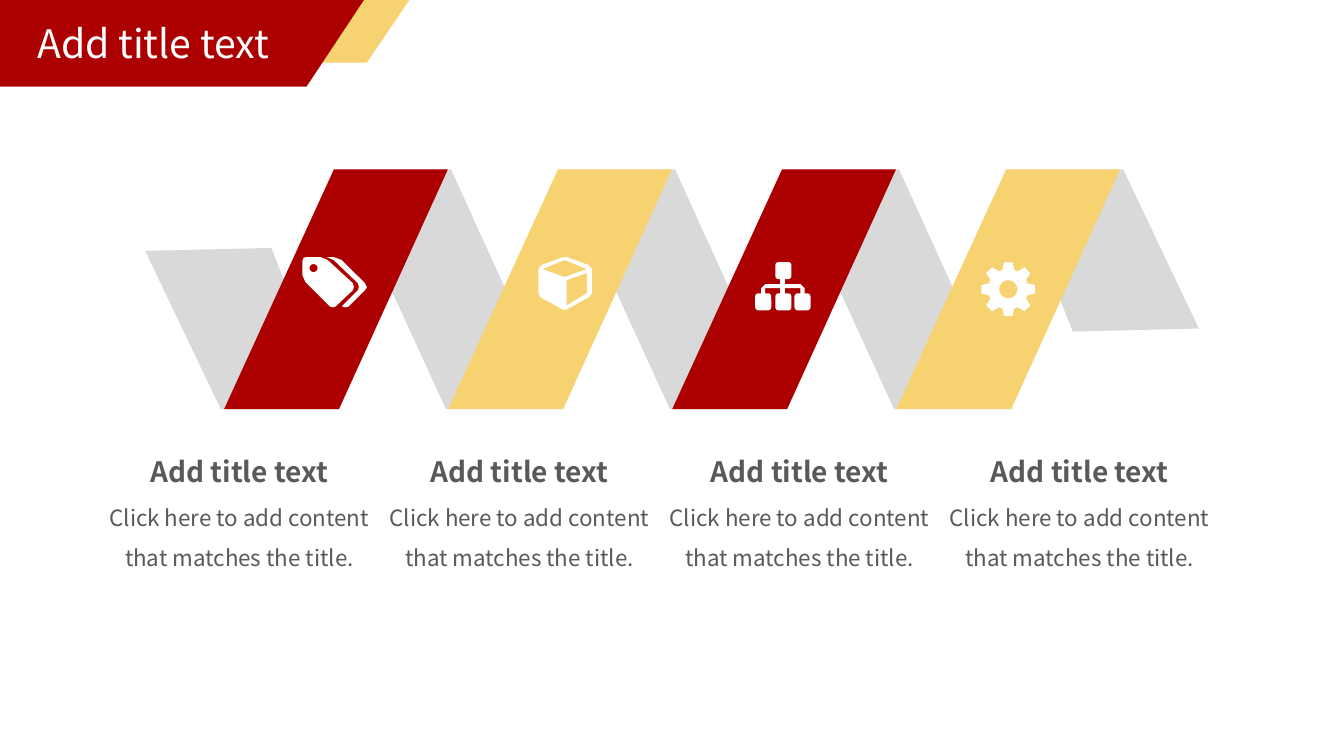
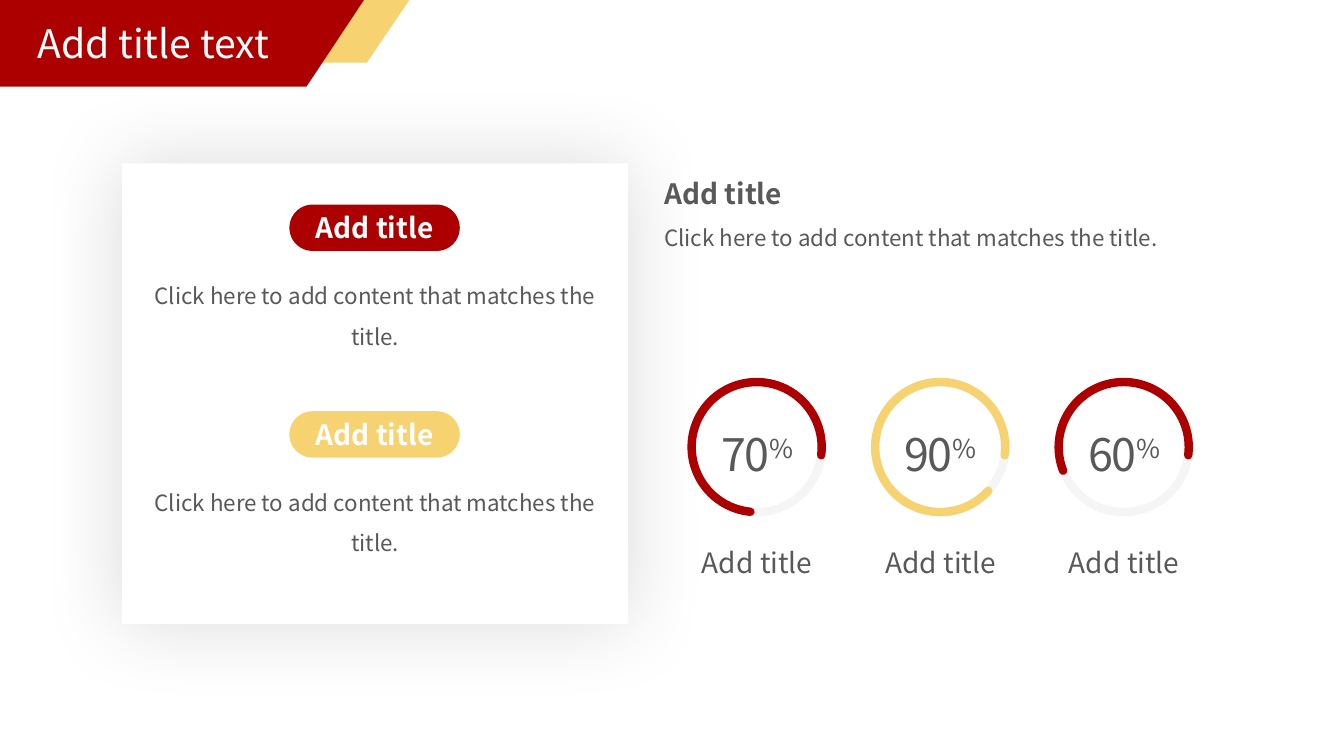
import math
import lxml.etree
import pptx
import pptx.dml.color
import pptx.enum.shapes
import pptx.enum.text
import pptx.oxml.ns
import pptx.util

Inches = pptx.util.Inches
Shapes = pptx.enum.shapes.MSO_SHAPE
Align = pptx.enum.text.PP_ALIGN
Anchor = pptx.enum.text.MSO_ANCHOR

FONT = "Noto Sans CJK SC"
RED, YELLOW, WHITE = "AC0000", "F6D271", "FFFFFF"
INK, FOLD, TRACK = "595959", "D9D9D9", "A6A6A6"

TITLE = "Add title text"
HEADING = "Add title"
CONTENT = "Click here to add content that matches the title."
BANDS = [
    (YELLOW, [(0.83, 0), (4.06, 0), (3.64, 0.62), (0.83, 0.62)]),
    (RED, [(0, 0), (3.61, 0), (3.04, 0.86), (0, 0.86)]),
]
COLUMNS = [(TITLE, CONTENT, colour) for colour in (RED, YELLOW, RED, YELLOW)]
CARD_ITEMS = [(HEADING, CONTENT, RED, 2.03), (HEADING, CONTENT, YELLOW, 4.08)]
RINGS = [("70", HEADING, RED, 57.31), ("90", HEADING, YELLOW, 25.39), ("60", HEADING, RED, 95.2)]

RIBBON_TOP, RIBBON_BOTTOM, RIBBON_PITCH = 1.68, 4.06, 20 / 9
RIBBON_ENDS = [
    [(1.44, 2.49), (2.19, 4.06), (3.33, 4.06), (2.69, 2.46)],
    [(11.89, 3.26), (11.14, 1.68), (10, 1.68), (10.64, 3.29)],
]
TAG_FRONT = [(3.5, 2.88), (3.33, 3.04), (3.3, 3.05), (3.27, 3.04), (3.03, 2.8), (3, 2.73), (3, 2.59),
             (3.01, 2.56), (3.04, 2.55), (3.18, 2.55), (3.25, 2.58), (3.5, 2.81), (3.51, 2.85)]
TAG_BACK = [(3.62, 2.88), (3.46, 3.04), (3.43, 3.05), (3.39, 3.04), (3.55, 2.88), (3.56, 2.85),
            (3.55, 2.81), (3.31, 2.58), (3.24, 2.55), (3.31, 2.55), (3.39, 2.58), (3.62, 2.81),
            (3.64, 2.85)]
CUBE = [
    [(5.87, 2.91), (5.84, 2.95), (5.62, 3.07), (5.6, 3.08), (5.58, 3.07), (5.36, 2.95), (5.34, 2.91),
     (5.34, 2.67), (5.37, 2.63), (5.59, 2.55), (5.62, 2.55), (5.84, 2.63), (5.87, 2.67)],
    [(5.82, 2.67), (5.6, 2.58), (5.38, 2.67), (5.6, 2.75)],
    [(5.82, 2.91), (5.82, 2.71), (5.62, 2.78), (5.62, 3.03)],
]
TREE_BOXES = [(7.69, 2.6), (7.49, 2.91), (7.69, 2.91), (7.88, 2.91)]
TREE_BRANCH = [(7.55, 2.92), (7.55, 2.86), (7.59, 2.82), (7.94, 2.82), (7.98, 2.86), (7.98, 2.92),
               (7.94, 2.92), (7.94, 2.86), (7.59, 2.86), (7.59, 2.92)]
TREE_STEM = [(7.74, 2.75), (7.79, 2.75), (7.79, 2.92), (7.74, 2.92)]


def rgb(colour):
    return pptx.dml.color.RGBColor.from_string(colour)


def add_xml(parent, tag, **attributes):
    child = lxml.etree.SubElement(parent, pptx.oxml.ns.qn(tag))
    for name, value in attributes.items():
        child.set(name, str(value))
    return child


def paint(shape, fill=None, line=None, width=6):
    shape.shadow.inherit = False
    if fill:
        shape.fill.solid()
        shape.fill.fore_color.rgb = rgb(fill)
    else:
        shape.fill.background()
    if line:
        shape.line.color.rgb = rgb(line)
        shape.line.width = pptx.util.Pt(width)
    else:
        shape.line.fill.background()
    return shape


def add_preset(page, kind, left, top, width, height, **format):
    lengths = [Inches(value) for value in (left, top, width, height)]
    return paint(page.shapes.add_shape(kind, *lengths), **format)


def add_outline(page, contours, fill):
    builder = None
    for contour in contours:
        points = [(Inches(x), Inches(y)) for x, y in contour]
        if builder is None:
            builder = page.shapes.build_freeform(*points[0])
        else:
            builder.move_to(*points[0])
        builder.add_line_segments(points[1:], close=True)
    return paint(builder.convert_to_shape(), fill=fill)


def add_box(page, left, top, width, height, inset=True, anchor=Anchor.TOP):
    box = page.shapes.add_textbox(Inches(left), Inches(top), Inches(width), Inches(height))
    frame = box.text_frame
    frame.word_wrap = True
    frame.vertical_anchor = anchor
    if not inset:
        clear_insets(frame)
    return frame


def clear_insets(frame):
    frame.margin_left = frame.margin_top = frame.margin_right = frame.margin_bottom = 0


def write(para, text, size=16, colour=INK, bold=False, align=Align.CENTER, spacing=None,
          tracking=None, raised=None):
    para.alignment = align
    if spacing:
        para.line_spacing = spacing
    span = para.add_run()
    span.text = text
    span.font.name = FONT
    span.font.size = pptx.util.Pt(size)
    span.font.bold = bold
    span.font.color.rgb = rgb(colour)
    properties = span._r.get_or_add_rPr()
    if tracking:
        properties.set("spc", str(round(tracking * 100)))
    if raised:
        properties.set("baseline", str(raised * 1000))


def circle(x, y, radius, count=32):
    angles = [2 * math.pi * step / count for step in range(count)]
    return [(x + radius * math.cos(angle), y + radius * math.sin(angle)) for angle in angles]


def gear(x, y, teeth=8):
    points = []
    for tooth in range(teeth):
        for radius, offset in ((0.2, -17), (0.27, -9), (0.27, 9), (0.2, 17)):
            angle = math.radians(tooth * 360 / teeth + offset)
            points.append((x + radius * math.cos(angle), y + radius * math.sin(angle)))
    return points


def prepare_layout(deck):
    layout = deck.slide_layouts[5]
    for holder in list(layout.placeholders):
        if holder.placeholder_format.idx != 0:
            holder.element.getparent().remove(holder.element)
    title = layout.placeholders[0]
    title.left, title.top = Inches(0.37), Inches(0.19)
    title.width, title.height = Inches(2.53), Inches(0.47)
    clear_insets(title.text_frame)
    return layout


def add_bands(page, layout):
    for position, (colour, points) in enumerate(BANDS):
        band = add_outline(page, [points], colour)
        layout.shapes.element.insert(2 + position, band.element)


def add_page(deck, layout):
    page = deck.slides.add_slide(layout)
    write(page.shapes.title.text_frame.paragraphs[0], TITLE, size=28, colour=WHITE, align=Align.LEFT)
    return page


def draw_ribbon(page):
    top, bottom = RIBBON_TOP, RIBBON_BOTTOM
    folds = list(RIBBON_ENDS)
    for index in range(len(COLUMNS) - 1):
        left = RIBBON_PITCH * (index + 1.5)
        folds.append([(left + 2.22, bottom), (left + 1.14, top), (left, top), (left + 1.09, bottom)])
    for points in folds:
        add_outline(page, [points], FOLD)
    for index, (_, _, colour) in enumerate(COLUMNS):
        left = RIBBON_PITCH * (index + 1)
        points = [(left, bottom), (left + 1.09, top), (left + 2.22, top), (left + 1.14, bottom)]
        add_outline(page, [points], colour)


def draw_icons(page):
    icons = [
        [TAG_FRONT, circle(3.11, 2.66, 0.04), TAG_BACK],
        CUBE,
        [TREE_BRANCH],
        [TREE_STEM],
        [gear(10, 2.87), circle(10, 2.87, 0.09)],
    ]
    for contours in icons:
        add_outline(page, contours, WHITE)
    for left, top in TREE_BOXES:
        node = add_preset(page, Shapes.ROUNDED_RECTANGLE, left, top, 0.16, 0.17, fill=WHITE)
        node.adjustments[0] = 0.2


def build_ribbon_page(page):
    draw_ribbon(page)
    draw_icons(page)
    for index, (heading, content, _) in enumerate(COLUMNS):
        left = 1.06 + index * 25 / 9
        content_box = add_box(page, left, 4.87, 2.63, 1.16, inset=False)
        write(content_box.paragraphs[0], content, spacing=1.5)
        heading_box = add_box(page, left, 4.51, 2.63, 0.34, inset=False)
        write(heading_box.paragraphs[0], heading, size=20, bold=True)


def draw_card(page):
    card = add_preset(page, Shapes.RECTANGLE, 1.21, 1.62, 5.02, 4.57, fill=WHITE)
    effects = card.element.spPr.find(pptx.oxml.ns.qn("a:effectLst"))
    shadow = add_xml(effects, "a:outerShdw", blurRad=pptx.util.Pt(60), dist=0, algn="ctr", rotWithShape=0)
    add_xml(add_xml(shadow, "a:srgbClr", val="000000"), "a:alpha", val=15000)
    for heading, content, colour, top in CARD_ITEMS:
        pill = add_preset(page, Shapes.ROUNDED_RECTANGLE, 2.87, top, 1.69, 0.46, fill=colour)
        pill.adjustments[0] = 0.5
        pill.text_frame.vertical_anchor = Anchor.MIDDLE
        write(pill.text_frame.paragraphs[0], heading, size=20, colour=WHITE, bold=True)
        content_box = add_box(page, 1.34, top + 0.64, 4.76, 0.76, inset=False)
        write(content_box.paragraphs[0], content, spacing=1.5)


def draw_ring(page, centre, number, label, colour, start):
    place = (centre - 0.65, 3.79, 1.29, 1.29)
    track = add_preset(page, Shapes.OVAL, *place, line=TRACK)
    tint = track.line.fill._xPr.find(".//" + pptx.oxml.ns.qn("a:srgbClr"))
    add_xml(tint, "a:alpha", val=10000)
    arc = add_preset(page, Shapes.ARC, *place, line=colour)
    arc.adjustments[0], arc.adjustments[1] = start, 4.36
    arc.element.spPr.find(pptx.oxml.ns.qn("a:ln")).set("cap", "rnd")
    para = add_box(page, centre - 0.56, 4.18, 1.12, 0.64, anchor=Anchor.MIDDLE).paragraphs[0]
    write(para, number, size=32, tracking=-1.5)
    write(para, "%", size=32, tracking=-1.5, raised=30)
    label_box = add_box(page, centre - 1.02, 5.43, 2.04, 0.37)
    write(label_box.paragraphs[0], label, size=20, spacing=0.8)


def build_ring_page(page):
    draw_card(page)
    intro = add_box(page, 6.49, 1.54, 5.61, 0.96)
    write(intro.paragraphs[0], HEADING, size=20, bold=True, align=Align.LEFT, spacing=1.5)
    write(intro.add_paragraph(), CONTENT, align=Align.LEFT, spacing=1.5)
    for index, ring in enumerate(RINGS):
        draw_ring(page, 7.51 + 1.82 * index, *ring)


def main():
    deck = pptx.Presentation()
    deck.slide_width, deck.slide_height = Inches(13.33), Inches(7.5)
    layout = prepare_layout(deck)
    ribbon_page = add_page(deck, layout)
    add_bands(ribbon_page, layout)
    build_ribbon_page(ribbon_page)
    build_ring_page(add_page(deck, layout))
    deck.save("out.pptx")


if __name__ == "__main__":
    main()
